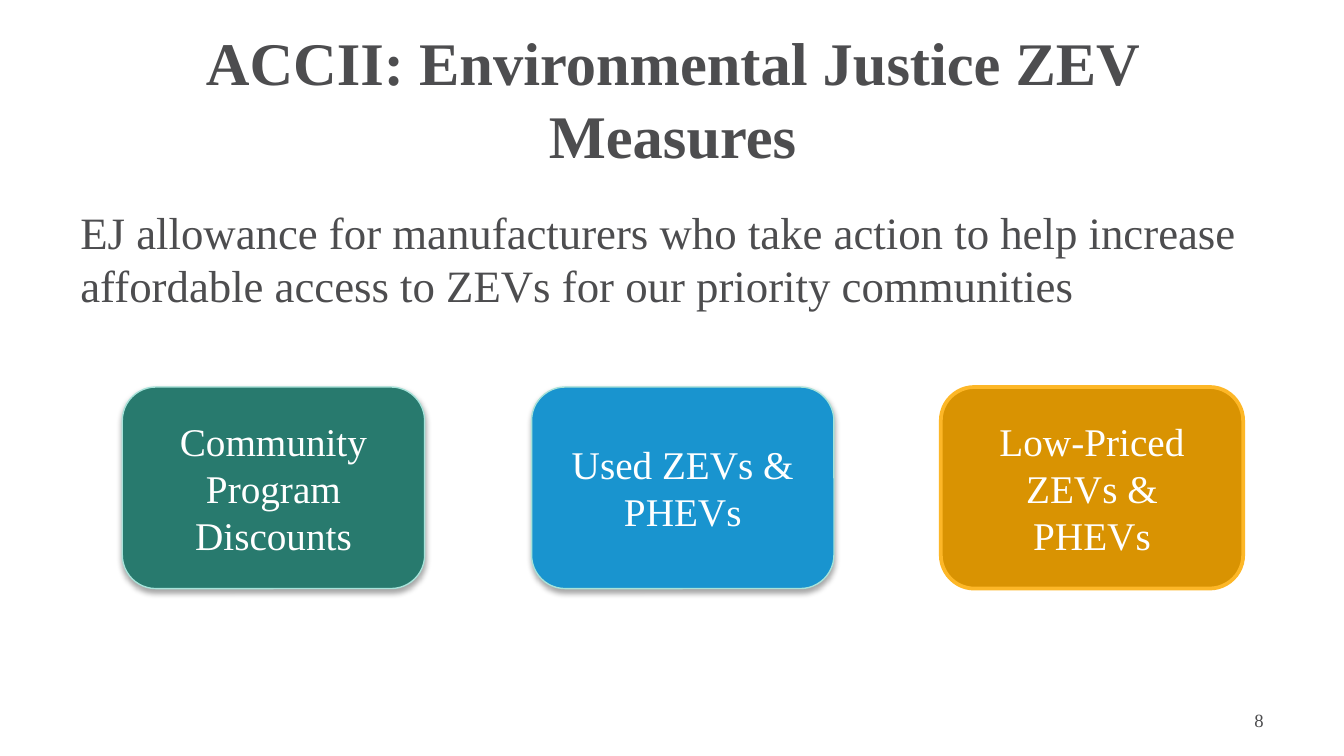
from lxml import etree
from pptx import Presentation
from pptx.dml.color import RGBColor
from pptx.enum.shapes import MSO_SHAPE
from pptx.enum.text import MSO_ANCHOR, PP_ALIGN
from pptx.oxml.ns import qn
from pptx.util import Inches, Pt

ROUNDED = MSO_SHAPE.ROUNDED_RECTANGLE
TOP, MIDDLE = MSO_ANCHOR.TOP, MSO_ANCHOR.MIDDLE
LEFT, CENTER, RIGHT = PP_ALIGN.LEFT, PP_ALIGN.CENTER, PP_ALIGN.RIGHT
SLIDE_WIDTH = 10
SLIDE_HEIGHT = SLIDE_WIDTH * 9 / 16
FONT = "Times New Roman"
COLORS = {
    "text": "4D4D4F",
    "white": "FFFFFF",
    "green": "287A6E",
    "blue": "1994CF",
    "amber": "D99302",
    "mint": "A7E2D9",
    "yellow": "FDB727",
    "shadow": "000000",
}


def color(name):
    """Return the named palette colour."""
    return RGBColor.from_string(COLORS[name])


def write_text(shape, text, size, fill="text", bold=False, align=LEFT, anchor=TOP):
    """Write one paragraph for each line of text."""
    frame = shape.text_frame
    frame.word_wrap = True
    frame.vertical_anchor = anchor
    frame.text = text
    for paragraph in frame.paragraphs:
        paragraph.alignment = align
        font = paragraph.font
        font.name, font.size, font.bold = FONT, Pt(size), bold
        font.color.rgb = color(fill)


def add_text(slide, box, text, **text_format):
    """Add a text box with formatted text."""
    shape = slide.shapes.add_textbox(*map(Inches, box))
    write_text(shape, text, **text_format)


def add_shadow(shape):
    """Give a shape a soft shadow straight below it."""
    effects = shape._element.spPr.find(qn("a:effectLst"))
    shadow = etree.SubElement(
        effects, qn("a:outerShdw"), blurRad=str(Pt(3.1)), dist=str(Pt(1.8)),
        dir="5400000", rotWithShape="0")
    shade = etree.SubElement(shadow, qn("a:srgbClr"), val=COLORS["shadow"])
    etree.SubElement(shade, qn("a:alpha"), val="35000")


def add_measure(slide, box, text, fill, line, line_width, shadow):
    """Add one rounded card naming a measure."""
    card = slide.shapes.add_shape(ROUNDED, *map(Inches, box))
    card.shadow.inherit = False
    card.fill.solid()
    card.fill.fore_color.rgb = color(fill)
    card.line.color.rgb = color(line)
    card.line.width = Pt(line_width)
    if shadow:
        add_shadow(card)
    write_text(card, text, size=21, fill="white", align=CENTER, anchor=MIDDLE)


def add_measures(slide, box):
    """Spread the measure cards evenly across the box."""
    left, top, width, height = box
    card_width = 2.25
    measures = [
        ("Community Program\nDiscounts", "green", "mint", 0.75, True),
        ("Used ZEVs & PHEVs", "blue", "mint", 0.75, True),
        ("Low-Priced ZEVs & PHEVs", "amber", "yellow", 2, False),
    ]
    step = (width - card_width) / (len(measures) - 1)
    for index, measure in enumerate(measures):
        add_measure(slide, (left + index * step, top, card_width, height), *measure)


def main():
    """Build and save the slide."""
    presentation = Presentation()
    presentation.slide_width = Inches(SLIDE_WIDTH)
    presentation.slide_height = Inches(SLIDE_HEIGHT)
    slide = presentation.slides.add_slide(presentation.slide_layouts[6])
    add_text(slide, (0.5, 1.47, 9.03, 1.31),
             "EJ allowance for manufacturers who take action to help increase "
             "affordable access to ZEVs for our priority communities", size=24)
    add_text(slide, (0.62, 0.23, 8.77, 1), "ACCII: Environmental Justice ZEV Measures",
             size=32.4, bold=True, align=CENTER, anchor=MIDDLE)
    add_measures(slide, (0.91, 2.88, 8.34, 1.5))
    add_text(slide, (8.5, 5.21, 1, 0.3), "8", size=10, align=RIGHT, anchor=MIDDLE)
    presentation.save("out.pptx")


if __name__ == "__main__":
    main()
